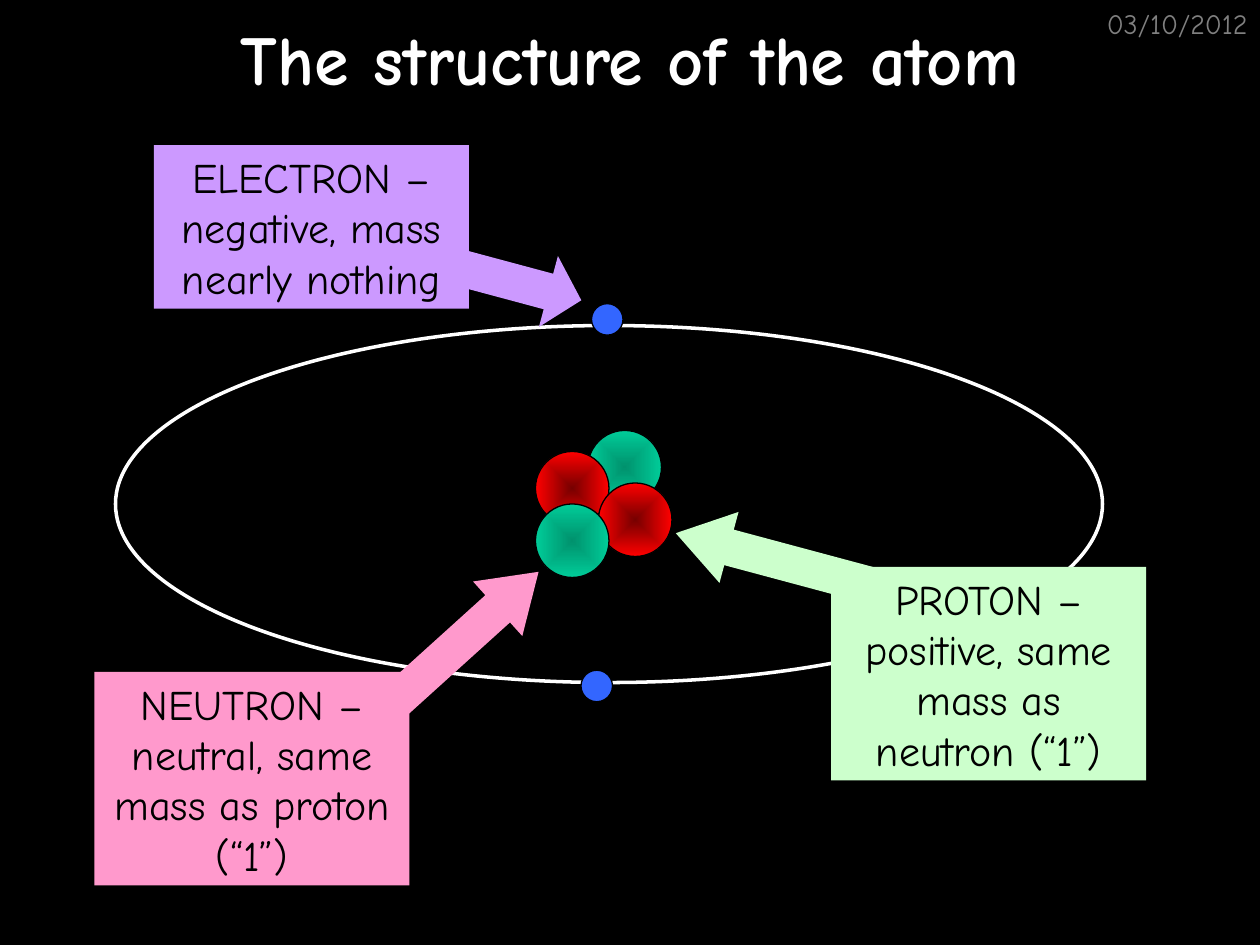
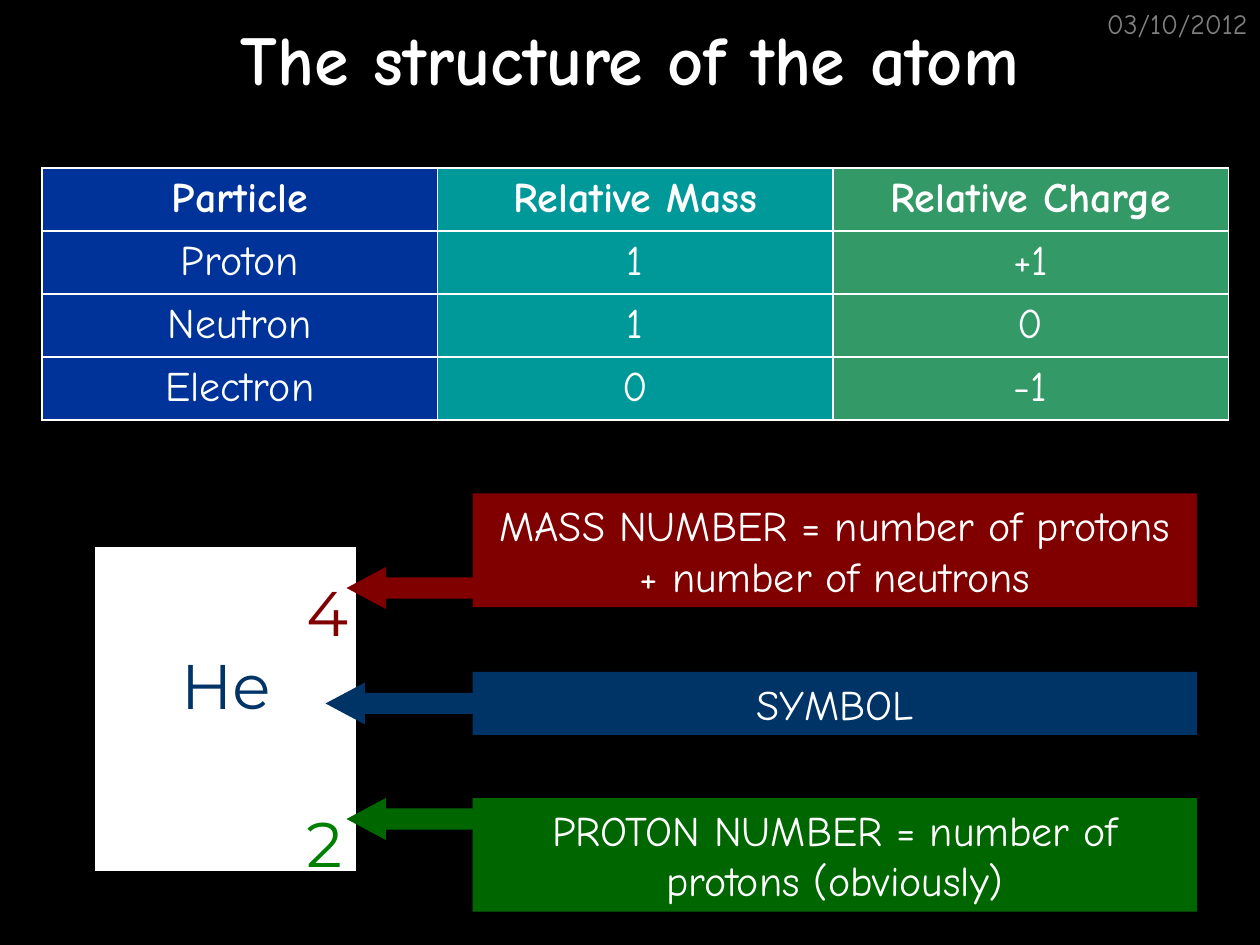
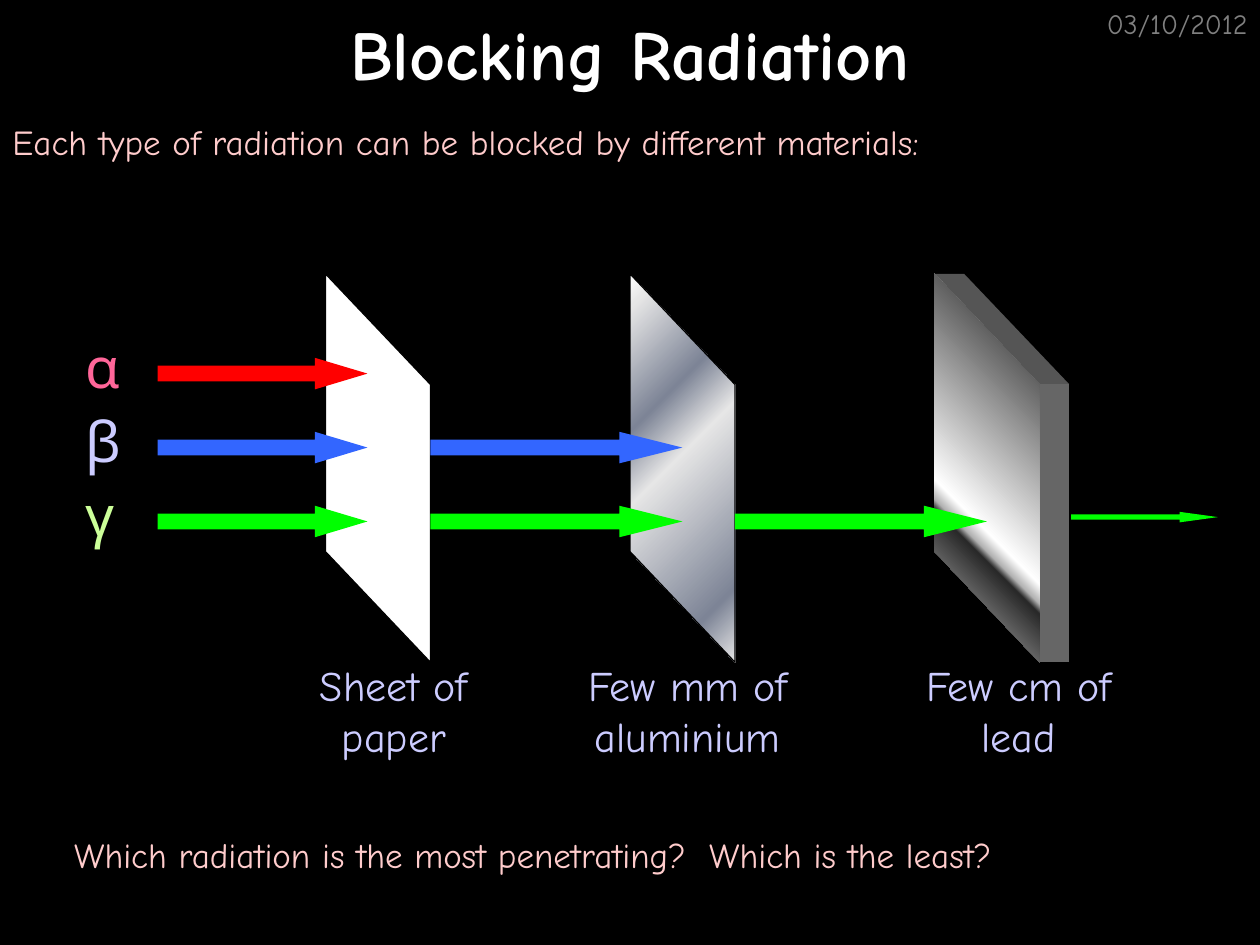
from dataclasses import dataclass
from typing import Optional

from lxml import etree
from pptx import Presentation
from pptx import util as u
from pptx.dml.color import RGBColor
from pptx.enum import shapes, text
from pptx.oxml.ns import qn

Pt = u.Pt
Kind = shapes.MSO_SHAPE
Align = text.PP_ALIGN
Anchor = text.MSO_ANCHOR

BODY_FONT, SYMBOL_FONT = "Comic Neue", "Montserrat"
BLACK, WHITE, GREY = "000000", "FFFFFF", "808080"
BLUE, GREEN, RED = "3366FF", "00FF00", "FF0000"
LILAC, PINK = "CCCCFF", "FFCCCC"
DATE = "03/10/2012"


@dataclass(frozen=True)
class Box:
    left: float
    top: float
    width: float
    height: float

    def lengths(self) -> tuple:
        return Pt(self.left), Pt(self.top), Pt(self.width), Pt(self.height)


@dataclass(frozen=True)
class Gradient:
    """Stops are (percent, colour); without an angle the gradient runs out from the centre."""
    stops: tuple
    angle: Optional[int] = None
    turns_with_shape: bool = True


@dataclass(frozen=True)
class Callout:
    words: str
    box: Box
    arrow: Box
    fill: str
    turn: float = 0
    head: float = 0.75
    arrow_in_front: bool = True


@dataclass(frozen=True)
class Sheet:
    label: str
    label_left: float
    label_width: float
    fill: object
    line: Optional[str] = None


PROTON = Gradient(((0, "760000"), (100, RED)))
NEUTRON = Gradient(((0, "00926D"), (100, "00CC99")))
ALUMINIUM = Gradient(((0, WHITE), (7, "E6E6E6"), (32, "7D8496"), (47, "E6E6E6"),
                      (85, "7D8496"), (100, "E6E6E6")), 45, False)
LEAD = Gradient(((0, "CBCBCB"), (13, "5F5F5F"), (21, "5F5F5F"), (63, WHITE), (67, "B2B2B2"),
                 (69, "292929"), (82, "777777"), (100, "EAEAEA")), 45)

ATOM_CALLOUTS = (
    Callout("ELECTRON – negative, mass nearly nothing", Box(88, 83, 180, 93.5),
            Box(255.5, 140.5, 78, 42), "CC99FF", 195, 0.464, False),
    Callout("PROTON – positive, same mass as neutron (“1”)", Box(475, 324, 180, 122),
            Box(384, 300, 126, 42), "CCFFCC", 15, arrow_in_front=False),
    Callout("NEUTRON – neutral, same mass as proton (“1”)", Box(54, 384, 180, 122),
            Box(198, 348, 126, 42), "FF99CC", 137.9),
)
SYMBOL_CALLOUTS = (
    Callout("MASS NUMBER = number of protons + number of neutrons", Box(270, 282, 414, 65),
            Box(198, 324, 90, 24), "800000", head=0.938),
    Callout("SYMBOL", Box(270, 384, 414, 36), Box(186, 390, 90, 24), "003366", head=0.938),
    Callout("PROTON NUMBER = number of protons (obviously)", Box(270, 456, 414, 65),
            Box(198, 456, 90, 24), "006600", head=0.938),
)
PARTICLES = (
    ("Particle", "Relative Mass", "Relative Charge"),
    ("Proton", "1", "+1"),
    ("Neutron", "1", "0"),
    ("Electron", "0", "-1"),
)
COLUMN_FILLS = ("003399", "009999", "339966")
SHEETS = (
    Sheet("Sheet of paper", 144, 162, WHITE, BLACK),
    Sheet("Few mm of aluminium", 300, 186, ALUMINIUM, BLACK),
    Sheet("Few cm of lead", 498, 168, LEAD),
)


def colour(value: str) -> RGBColor:
    return RGBColor.from_string(value)


def write(frame, words: str, *, size: float = 24, font: str = BODY_FONT, ink: str = BLACK,
          bold: bool = False, align=Align.CENTER, anchor=Anchor.TOP, wrap: bool = True) -> None:
    frame.word_wrap = wrap
    frame.vertical_anchor = anchor
    paragraph = frame.paragraphs[0]
    paragraph.alignment = align
    run = paragraph.add_run()
    run.text = words
    run.font.size = Pt(size)
    run.font.name = font
    run.font.bold = bold
    run.font.color.rgb = colour(ink)


def add_text(slide, box: Box, words: str, **style) -> None:
    write(slide.shapes.add_textbox(*box.lengths()).text_frame, words, **style)


def apply_gradient(shape, gradient: Gradient) -> None:
    shape.fill.gradient()
    element = shape.element.spPr.find(qn("a:gradFill"))
    for child in list(element):
        element.remove(child)
    element.set("rotWithShape", str(int(gradient.turns_with_shape)))
    stops = etree.SubElement(element, qn("a:gsLst"))
    for percent, value in gradient.stops:
        stop = etree.SubElement(stops, qn("a:gs"), pos=str(percent * 1000))
        etree.SubElement(stop, qn("a:srgbClr"), val=value)
    if gradient.angle is None:
        centre = etree.SubElement(element, qn("a:path"), path="shape")
        etree.SubElement(centre, qn("a:fillToRect"), dict.fromkeys("ltrb", "50000"))
    else:
        etree.SubElement(element, qn("a:lin"), ang=str(gradient.angle * 60000), scaled="1")


def paint(shape, fill=None, line: Optional[str] = None, line_width: float = 0.75) -> None:
    shape.shadow.inherit = False
    if isinstance(fill, Gradient):
        apply_gradient(shape, fill)
    elif fill:
        shape.fill.solid()
        shape.fill.fore_color.rgb = colour(fill)
    else:
        shape.fill.background()
    if line:
        shape.line.color.rgb = colour(line)
        shape.line.width = Pt(line_width)
    else:
        shape.line.fill.background()


def add_shape(slide, kind, box: Box, *, turn: float = 0, adjust: tuple = (), **look):
    shape = slide.shapes.add_shape(kind, *box.lengths())
    shape.rotation = turn
    for index, value in enumerate(adjust):
        shape.adjustments[index] = value
    paint(shape, **look)
    return shape


def add_polygon(slide, points: list, fill: str) -> None:
    corners = [(Pt(x), Pt(y)) for x, y in points]
    builder = slide.shapes.build_freeform(*corners[0])
    builder.add_line_segments(corners[1:], close=True)
    paint(builder.convert_to_shape(), fill)


def add_callout(slide, callout: Callout, ink: str) -> None:
    def add_arrow() -> None:
        add_shape(slide, Kind.LEFT_ARROW, callout.arrow, turn=callout.turn,
                  adjust=(0.5, callout.head), fill=callout.fill)

    if not callout.arrow_in_front:
        add_arrow()
    panel = add_shape(slide, Kind.RECTANGLE, callout.box, fill=callout.fill)
    write(panel.text_frame, callout.words, ink=ink)
    if callout.arrow_in_front:
        add_arrow()


def new_slide(presentation, title: str, title_height: float = 66):
    """Start a black slide with the date and the title."""
    slide = presentation.slides.add_slide(presentation.slide_layouts[6])
    slide.background.fill.solid()
    slide.background.fill.fore_color.rgb = colour(BLACK)
    add_text(slide, Box(570, 0, 150, 36), DATE, size=16, ink=GREY, align=Align.RIGHT)
    add_text(slide, Box(0, 0, 720, title_height), title, size=40, ink=WHITE, bold=True,
             anchor=Anchor.MIDDLE)
    return slide


def add_particle_table(slide) -> None:
    box = Box(24, 96, 678, 142)
    frame = slide.shapes.add_table(len(PARTICLES), len(COLUMN_FILLS), *box.lengths())
    table = frame.table
    table.first_row = table.horz_banding = False
    for row, words in enumerate(PARTICLES):
        for column, word in enumerate(words):
            cell = table.cell(row, column)
            cell.fill.solid()
            cell.fill.fore_color.rgb = colour(COLUMN_FILLS[column])
            write(cell.text_frame, word, ink=WHITE, bold=row == 0)
            add_borders(cell)


def add_borders(cell) -> None:
    properties = cell._tc.get_or_add_tcPr()
    for index, side in enumerate(("lnL", "lnR", "lnT", "lnB")):
        border = etree.Element(qn(f"a:{side}"), w=str(Pt(1)))
        fill = etree.SubElement(border, qn("a:solidFill"))
        etree.SubElement(fill, qn("a:srgbClr"), val=WHITE)
        properties.insert(index, border)


def build_atom(presentation) -> None:
    slide = new_slide(presentation, "The structure of the atom")
    for left, top, fill in ((336, 246, NEUTRON), (306, 258, PROTON),
                            (342, 276, PROTON), (306, 288, NEUTRON)):
        add_shape(slide, Kind.OVAL, Box(left, top, 42, 42), fill=fill, line=BLACK)
    add_shape(slide, Kind.OVAL, Box(66, 186, 564, 204), line=WHITE, line_width=2)
    for left, top in ((332, 383), (338, 173.5)):
        add_shape(slide, Kind.OVAL, Box(left, top, 18, 18), fill=BLUE, line=BLACK)
    for callout in ATOM_CALLOUTS:
        add_callout(slide, callout, BLACK)


def build_symbol(presentation) -> None:
    slide = new_slide(presentation, "The structure of the atom")
    add_particle_table(slide)
    add_shape(slide, Kind.RECTANGLE, Box(54, 312, 150, 186), fill=WHITE, line=BLACK)
    for words, box, ink in (("He", Box(96, 366, 66, 75), "003366"),
                            ("2", Box(168, 456, 24, 27), "008000"),
                            ("4", Box(168, 324, 24, 30), "800000")):
        add_text(slide, box, words, size=36, font=SYMBOL_FONT, ink=ink, wrap=False)
    for callout in SYMBOL_CALLOUTS:
        add_callout(slide, callout, WHITE)


def add_lead_edges(slide) -> None:
    """Draw the top and the side that give the lead sheet its thickness."""
    left, right, depth = 534, 594, 17
    top, shoulder, bottom = 156.5, 219.5, 378.5
    add_polygon(slide, [(left, top), (left + depth, top), (right + depth, shoulder),
                        (right, shoulder)], "555555")
    add_polygon(slide, [(right, shoulder), (right + depth, shoulder),
                        (right + depth, bottom), (right, bottom)], "666666")


def add_ray(slide, box: Box, fill: str, head: float) -> None:
    add_shape(slide, Kind.RIGHT_ARROW, box, adjust=(0.5, head), fill=fill)


def build_blocking(presentation) -> None:
    slide = new_slide(presentation, "Blocking Radiation", 60)
    add_text(slide, Box(0, 65.5, 720, 31), size=20, ink=PINK, align=Align.LEFT,
             words="Each type of radiation can be blocked by different materials:")
    add_lead_edges(slide)
    for index, sheet in enumerate(SHEETS):
        add_shape(slide, Kind.PARALLELOGRAM, Box(105 + 174 * index, 237.5, 222, 60), turn=90,
                  adjust=(1.054,), fill=sheet.fill, line=sheet.line)
        add_text(slide, Box(sheet.label_left, 373.5, sheet.label_width, 65), sheet.label,
                 ink=LILAC)

    ray_paths = ((90, 120, 1.667), (246, 144, 2), (420, 144, 2))
    rays = (("α", "FF6699", RED), ("β", LILAC, BLUE), ("γ", "CCFF99", GREEN))
    for index, (letter, ink, fill) in enumerate(rays):
        top = 204.5 + 42.25 * index
        add_text(slide, Box(42, top - 18, 54, 45), letter, size=32, ink=ink, align=Align.LEFT)
        for left, width, head in ray_paths[:index + 1]:
            add_ray(slide, Box(left, top, width, 18), fill, head)
    add_ray(slide, Box(612, 292.5, 84, 6), GREEN, 3.652)
    add_text(slide, Box(8.5, 472.5, 592.5, 31), size=20, ink=PINK, wrap=False,
             words="Which radiation is the most penetrating?  Which is the least?")


def main() -> None:
    presentation = Presentation()
    presentation.slide_width, presentation.slide_height = Pt(720), Pt(540)
    build_atom(presentation)
    build_symbol(presentation)
    build_blocking(presentation)
    presentation.save("out.pptx")


if __name__ == "__main__":
    main()
